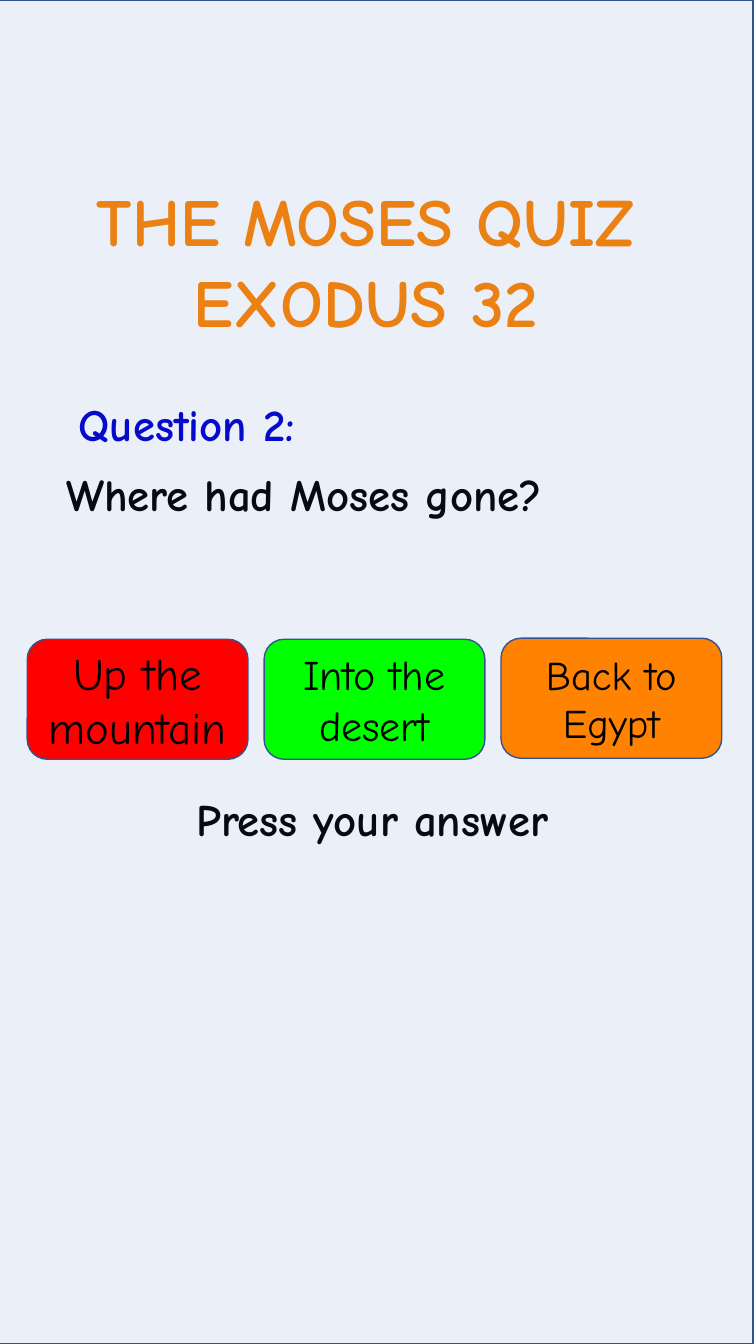
from lxml import etree
from pptx import Presentation
from pptx.dml.color import RGBColor
from pptx.enum import shapes, text
from pptx.oxml.ns import qn
from pptx.util import Pt

PX = 9144  # 100 px to the inch
FONT = "Comic Neue"
HUES = {"orange": "FF8200", "blue": "0000CC", "black": "000000", "red": "FF0000",
        "green": "00FF00", "tint": "4472C4", "edge": "325491"}
CENTER = text.PP_ALIGN.CENTER
LEFT = text.PP_ALIGN.LEFT

deck = Presentation()
deck.slide_width, deck.slide_height = 750 * PX, 1333 * PX
slide = deck.slides.add_slide(deck.slide_layouts[6])


def write(frame, lines, size, hue, bold, align):
    frame.text = lines
    for para in frame.paragraphs:
        para.alignment = align
        para.font.name, para.font.size, para.font.bold = FONT, Pt(size), bold
        para.font.color.rgb = RGBColor.from_string(HUES[hue])


def panel(kind, box, hue):
    shape = slide.shapes.add_shape(kind, *[n * PX for n in box])
    shape.shadow.inherit = False
    shape.fill.solid()
    shape.fill.fore_color.rgb = RGBColor.from_string(HUES[hue])
    shape.line.color.rgb = RGBColor.from_string(HUES["edge"])
    shape.line.width = Pt(1)
    return shape


# Title, question and prompt: words, box, size, hue, align, wrap, spacing
labels = [
    ("THE MOSES QUIZ \nEXODUS 32 ", (30, 173, 689, 172), 48, "orange", CENTER, False, None),
    ("Question 2:", (47, 389, 277, 64), 32, "blue", CENTER, False, None),
    ("Where had Moses gone?", (56, 456, 636, 146), 32, "black", LEFT, True, Pt(40)),
    ("Press your answer", (185, 786, 422, 72), 32, "black", LEFT, True, 0.9),
]
for words, box, size, hue, align, wrap, space in labels:
    frame = slide.shapes.add_textbox(*[n * PX for n in box]).text_frame
    frame.word_wrap = wrap
    write(frame, words, size, hue, True, align)
    if space:
        frame.paragraphs[0].line_spacing = space
        frame.paragraphs[0].space_before = Pt(7.5)

# Pale tint over the whole slide
veil = panel(shapes.MSO_SHAPE.RECTANGLE, (-3, 0, 750, 1333), "tint")
color = veil.fill._xPr.find(qn("a:solidFill"))[0]
etree.SubElement(color, qn("a:alpha")).set("val", "10000")

# Answer buttons
answers = [("Up the mountain", 634, 32, "red"), ("Into the desert", 634, 30, "green"),
           ("Back to Egypt", 633, 29, "orange")]
for i, (words, top, size, hue) in enumerate(answers):
    box = (27 + 235 * i, top, 219, 119)
    frame = panel(shapes.MSO_SHAPE.ROUNDED_RECTANGLE, box, hue).text_frame
    frame.word_wrap = True
    frame.vertical_anchor = text.MSO_ANCHOR.MIDDLE
    write(frame, words, size, "black", False, CENTER)

deck.save("out.pptx")
